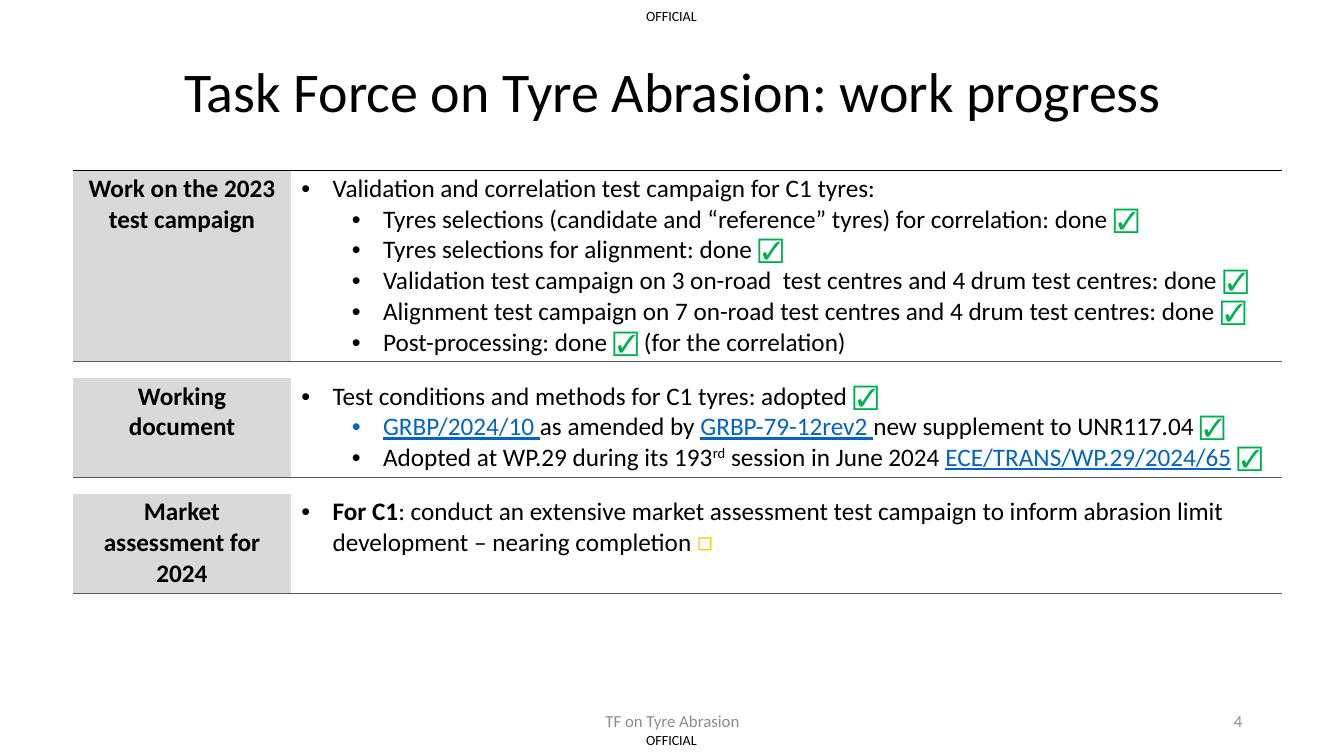
import lxml.etree
import pptx
import pptx.dml.color
import pptx.enum.text
import pptx.oxml.ns
import pptx.util

BLACK, GREY, RULE, LABEL_FILL = "000000", "8C8C8C", "595959", "D9D9D9"
LEFT = pptx.enum.text.PP_ALIGN.LEFT
CENTER = pptx.enum.text.PP_ALIGN.CENTER
RIGHT = pptx.enum.text.PP_ALIGN.RIGHT
MIDDLE = pptx.enum.text.MSO_ANCHOR.MIDDLE
inches = pptx.util.Inches
qn = pptx.oxml.ns.qn

STYLES = {
    "plain": {},
    "bold": {"bold": True},
    "done": {"color": "00B050"},
    "pending": {"color": "FFC000"},
    "link": {"color": "0563C1", "underline": True},
    "super": {},
}
DONE = ("☑", "done")

SECTIONS = [
    ("Work on the 2023 test campaign", 1.9, [
        (0, ["Validation and correlation test campaign for C1 tyres:"]),
        (1, ["Tyres selections (candidate and “reference” tyres) for correlation: done ", DONE]),
        (1, ["Tyres selections for alignment: done ", DONE]),
        (1, ["Validation test campaign on 3 on-road  test centres and 4 drum test centres: done ", DONE]),
        (1, ["Alignment test campaign on 7 on-road test centres and 4 drum test centres: done ", DONE]),
        (1, ["Post-processing: done ", ("☑ ", "done"), "(for the correlation)"]),
    ]),
    ("Working document", 0.99, [
        (0, ["Test conditions and methods for C1 tyres: adopted ", DONE]),
        (1, [("GRBP/2024/10 ", "link"), "as amended by ", ("GRBP-79-12rev2 ", "link"),
             "new supplement to UNR117.04 ", DONE]),
        (1, ["Adopted at WP.29 during its 193", ("rd", "super"), " session in June 2024 ",
             ("ECE/TRANS/WP.29/2024/65", "link"), " ", DONE]),
    ]),
    ("Market assessment for 2024", 0.99, [
        (0, [("For C1", "bold"),
             ": conduct an extensive market assessment test campaign to inform abrasion limit "
             "development – nearing completion ", ("◻", "pending")]),
    ]),
]
SPACER_HEIGHT = 0.16


def rgb(value):
    return pptx.dml.color.RGBColor.from_string(value)


def add_run(paragraph, text, size, color=BLACK, **extra):
    run = paragraph.add_run()
    run.text = text
    formats = {"name": "Calibri", "size": pptx.util.Pt(size), "bold": False, **extra}
    for name, value in formats.items():
        setattr(run.font, name, value)
    run.font.color.rgb = rgb(color)
    return run


presentation = pptx.Presentation()
presentation.slide_width = inches(13.33)
presentation.slide_height = inches(7.5)
slide = presentation.slides.add_slide(presentation.slide_layouts[5])

title = slide.shapes.title
place = {"left": 0.92, "top": 0.21, "width": 11.5, "height": 1.45}
for name, value in place.items():
    setattr(title, name, inches(value))
title.text_frame.vertical_anchor = MIDDLE
title_paragraph = title.text_frame.paragraphs[0]
title_paragraph.alignment = CENTER
title_paragraph.line_spacing = 0.9
add_run(title_paragraph, "Task Force on Tyre Abrasion: work progress", 40)

row_heights = []
for label, height, items in SECTIONS:
    row_heights += [height, SPACER_HEIGHT]
row_heights.pop()

frame = slide.shapes.add_table(len(row_heights), 2, inches(0.72), inches(1.69),
                               inches(12), inches(sum(row_heights)))
table = frame.table
table.first_row = False
table.horz_banding = False
style_id = table._tbl.tblPr.find(qn("a:tableStyleId"))
style_id.text = "{2D5ABB26-0587-4C30-8999-92F81FD0307C}"
for column, width in zip(table.columns, (2.17, 9.83)):
    column.width = inches(width)

for row_index, height in enumerate(row_heights):
    table.rows[row_index].height = inches(height)
    is_spacer = row_index % 2 == 1
    borders = {} if is_spacer else {"a:lnB": RULE}
    if row_index == 0:
        borders = {"a:lnT": BLACK, **borders}
    for column_index in range(2):
        cell = table.cell(row_index, column_index)
        cell.margin_top = cell.margin_bottom = inches(0 if is_spacer else 0.03)
        properties = cell._tc.get_or_add_tcPr()
        for tag, color in borders.items():
            line = lxml.etree.SubElement(properties, qn(tag), w="12700")
            solid = lxml.etree.SubElement(line, qn("a:solidFill"))
            lxml.etree.SubElement(solid, qn("a:srgbClr"), val=color)
        if column_index == 0:
            cell.fill.solid()
            cell.fill.fore_color.rgb = rgb("FFFFFF" if is_spacer else LABEL_FILL)
        else:
            cell.fill.background()
        if is_spacer:
            paragraph = cell.text_frame.paragraphs[0]
            lxml.etree.SubElement(paragraph._p, qn("a:endParaRPr"), sz="400")

for section_index, (label, height, items) in enumerate(SECTIONS):
    label_cell = table.cell(2 * section_index, 0)
    label_paragraph = label_cell.text_frame.paragraphs[0]
    label_paragraph.alignment = CENTER
    add_run(label_paragraph, label, 18, bold=True)

    text_frame = table.cell(2 * section_index, 1).text_frame
    for item_index, (level, parts) in enumerate(items):
        paragraph = text_frame.add_paragraph() if item_index else text_frame.paragraphs[0]
        paragraph.level = level
        properties = paragraph._p.get_or_add_pPr()
        properties.set("marL", str(inches(0.31 + 0.5 * level)))
        properties.set("indent", str(inches(-0.31)))
        lxml.etree.SubElement(properties, qn("a:buFont"), typeface="Arial")
        lxml.etree.SubElement(properties, qn("a:buChar"), char="•")
        for part in parts:
            text, style = (part, "plain") if isinstance(part, str) else part
            run = add_run(paragraph, text, 18, **STYLES[style])
            if style == "super":
                run._r.get_or_add_rPr().set("baseline", "30000")

CAPTIONS = [
    ("OFFICIAL", (6.41, 0.07, 0.53, 0.17), 10, BLACK, LEFT, 0),
    ("OFFICIAL", (6.41, 7.26, 0.53, 0.17), 10, BLACK, LEFT, 0),
    ("TF on Tyre Abrasion", (4.42, 6.95, 4.5, 0.4), 12, GREY, CENTER, 0.1),
    ("4", (9.42, 6.95, 3, 0.4), 12, GREY, RIGHT, 0.1),
]
for text, box, size, color, alignment, margin in CAPTIONS:
    caption = slide.shapes.add_textbox(*map(inches, box))
    formats = {
        "word_wrap": margin > 0,
        "vertical_anchor": MIDDLE,
        "margin_left": inches(margin),
        "margin_right": inches(margin),
        "margin_top": inches(margin / 2),
        "margin_bottom": inches(margin / 2),
    }
    for name, value in formats.items():
        setattr(caption.text_frame, name, value)
    paragraph = caption.text_frame.paragraphs[0]
    paragraph.alignment = alignment
    add_run(paragraph, text, size, color)

presentation.save("out.pptx")
